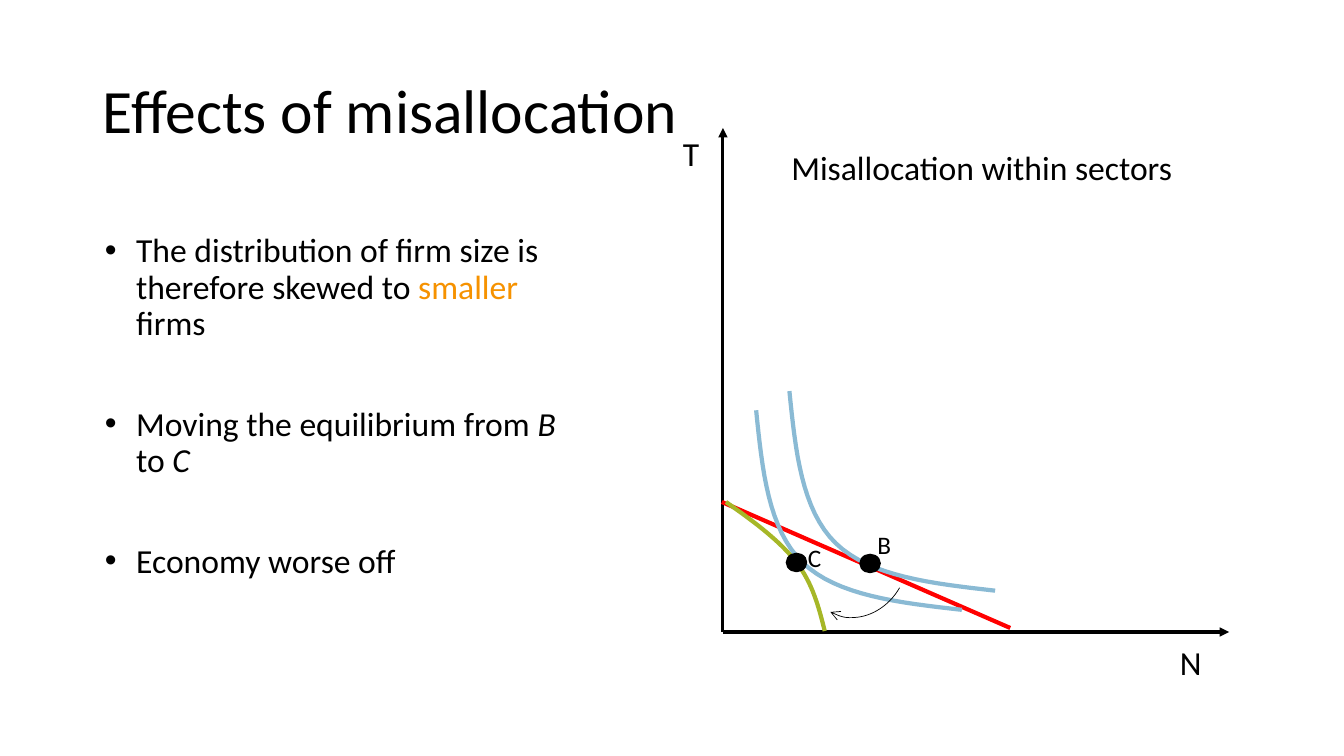
from lxml import etree
from pptx import Presentation
from pptx import util as u
from pptx.dml.color import RGBColor
from pptx.enum import shapes, text
from pptx.oxml import ns

BLACK = RGBColor(0x00, 0x00, 0x00)
ORANGE = RGBColor(0xF6, 0x92, 0x00)
RED = RGBColor(0xFF, 0x00, 0x00)
BLUE = RGBColor(0x8A, 0xBA, 0xD4)
GREEN = RGBColor(0xA6, 0xB7, 0x27)


def bezier(p0, p1, p2, p3, steps=16):
    for i in range(1, steps + 1):
        t = i / steps
        yield tuple(
            (1 - t) ** 3 * a + 3 * (1 - t) ** 2 * t * b + 3 * (1 - t) * t ** 2 * c + t ** 3 * d
            for a, b, c, d in zip(p0, p1, p2, p3)
        )


class Diagram:
    font = "Calibri"

    def __init__(self, slide):
        self.s = slide

    def place(self, sp, left, top, width, height):
        sp.left, sp.top = u.Inches(left), u.Inches(top)
        sp.width, sp.height = u.Inches(width), u.Inches(height)

    def run(self, p, words, size, color=BLACK, italic=False):
        r = p.add_run()
        r.text = words
        r.font.name, r.font.size = self.font, u.Pt(size)
        r.font.color.rgb, r.font.italic = color, italic

    def stroke(self, sp, color, width, head=None):
        sp.line.color.rgb = color
        sp.line.width = u.Pt(width)
        if head:
            ln = sp._element.spPr.get_or_add_ln()
            etree.SubElement(ln, ns.qn("a:tailEnd"), type=head)

    def title(self, words):
        sp = self.s.shapes.title
        self.place(sp, 0.92, 0.4, 11.5, 1.45)
        sp.text_frame.vertical_anchor = text.MSO_ANCHOR.MIDDLE
        p = sp.text_frame.paragraphs[0]
        p.alignment, p.line_spacing = text.PP_ALIGN.LEFT, 0.9
        self.run(p, words, 44)

    def bullets(self, items):
        sp = self.s.placeholders[1]
        self.place(sp, 0.94, 2.27, 4.85, 4.83)
        tf = sp.text_frame
        for i, runs in enumerate(items):
            p = tf.add_paragraph() if i else tf.paragraphs[0]
            p.line_spacing = 0.9
            p.space_before = u.Pt(46 if i else 10)
            pPr = p._p.get_or_add_pPr()
            pPr.set("marL", str(u.Inches(0.31)))
            pPr.set("indent", str(u.Inches(-0.31)))
            etree.SubElement(pPr, ns.qn("a:buFont"), typeface="Arial")
            etree.SubElement(pPr, ns.qn("a:buChar"), char="•")
            for words, style in runs:
                self.run(p, words, 24, **style)

    def label(self, words, left, top, width, height, size=24, align=text.PP_ALIGN.CENTER):
        sp = self.s.shapes.add_textbox(*map(u.Inches, (left, top, width, height)))
        tf = sp.text_frame
        tf.word_wrap = False
        tf.auto_size = text.MSO_AUTO_SIZE.SHAPE_TO_FIT_TEXT
        p = tf.paragraphs[0]
        p.alignment = align
        self.run(p, words, size)

    def line(self, start, end, color, width, head=None):
        sp = self.s.shapes.add_connector(
            shapes.MSO_CONNECTOR.STRAIGHT, *map(u.Inches, (*start, *end)))
        self.stroke(sp, color, width, head)
        etree.SubElement(sp._element.spPr, ns.qn("a:effectLst"))

    def curve(self, points, color):
        points = [(u.Inches(x), u.Inches(y)) for x, y in points]
        fb = self.s.shapes.build_freeform(*points[0])
        for i in range(0, len(points) - 1, 3):
            fb.add_line_segments(bezier(*points[i:i + 4]), close=False)
        sp = fb.convert_to_shape()
        sp.shadow.inherit = False
        sp.fill.background()
        self.stroke(sp, color, 3)

    def indifference(self, left, top):
        steps = [(0, 0), (0.06, 0.59), (0.12, 1.18), (0.46, 1.51),
                 (0.8, 1.84), (1.42, 1.91), (2.04, 1.98)]
        self.curve([(left + x, top + y) for x, y in steps], BLUE)

    def dot(self, left, top):
        sp = self.s.shapes.add_shape(
            shapes.MSO_SHAPE.OVAL, *map(u.Inches, (left, top, 0.2, 0.18)))
        sp.shadow.inherit = False
        sp.fill.solid()
        sp.fill.fore_color.rgb = BLACK
        self.stroke(sp, BLACK, 1)

    def arc_arrow(self, left, top, width, height, rotation):
        sp = self.s.shapes.add_shape(
            shapes.MSO_SHAPE.ARC, *map(u.Inches, (left, top, width, height)))
        sp.rotation = rotation
        sp.shadow.inherit = False
        sp.fill.background()
        self.stroke(sp, BLACK, 0.5, "arrow")


def main():
    prs = Presentation()
    prs.slide_width, prs.slide_height = u.Inches(13.33), u.Inches(7.5)
    d = Diagram(prs.slides.add_slide(prs.slide_layouts[1]))

    d.title("Effects of misallocation")
    d.bullets([
        [("The distribution of firm size is therefore skewed to ", {}),
         ("smaller", {"color": ORANGE}), (" firms", {})],
        [("Moving the equilibrium from ", {}), ("B", {"italic": True}),
         (" to ", {}), ("C", {"italic": True})],
        [("Economy worse off", {})],
    ])

    origin = (7.17, 6.27)
    d.line(origin, (7.17, 1.27), BLACK, 2.25, "triangle")
    d.line(origin, (12.19, 6.27), BLACK, 2.25, "triangle")
    d.label("T", 6.67, 1.27, 0.37, 0.5)
    d.label("N", 11.6, 6.32, 0.42, 0.5)

    d.line((7.16, 4.98), (10.02, 6.23), RED, 3)
    d.indifference(7.5, 4.07)
    d.curve([(7.2, 4.98), (7.47, 5.17), (7.73, 5.36), (7.9, 5.58),
             (8.06, 5.79), (8.12, 6.02), (8.18, 6.26)], GREEN)
    d.dot(7.8, 5.49)
    d.indifference(7.83, 3.88)
    d.dot(8.53, 5.5)
    d.label("B", 8.6, 5.2, 0.34, 0.4, 18)
    d.label("C", 7.91, 5.33, 0.34, 0.4, 18)
    d.arc_arrow(7.96, 5.12, 1.1, 0.95, 119.9)
    d.label("Misallocation within sectors", 7.75, 1.41, 4.01, 0.5, align=text.PP_ALIGN.LEFT)

    prs.save("out.pptx")


if __name__ == "__main__":
    main()
